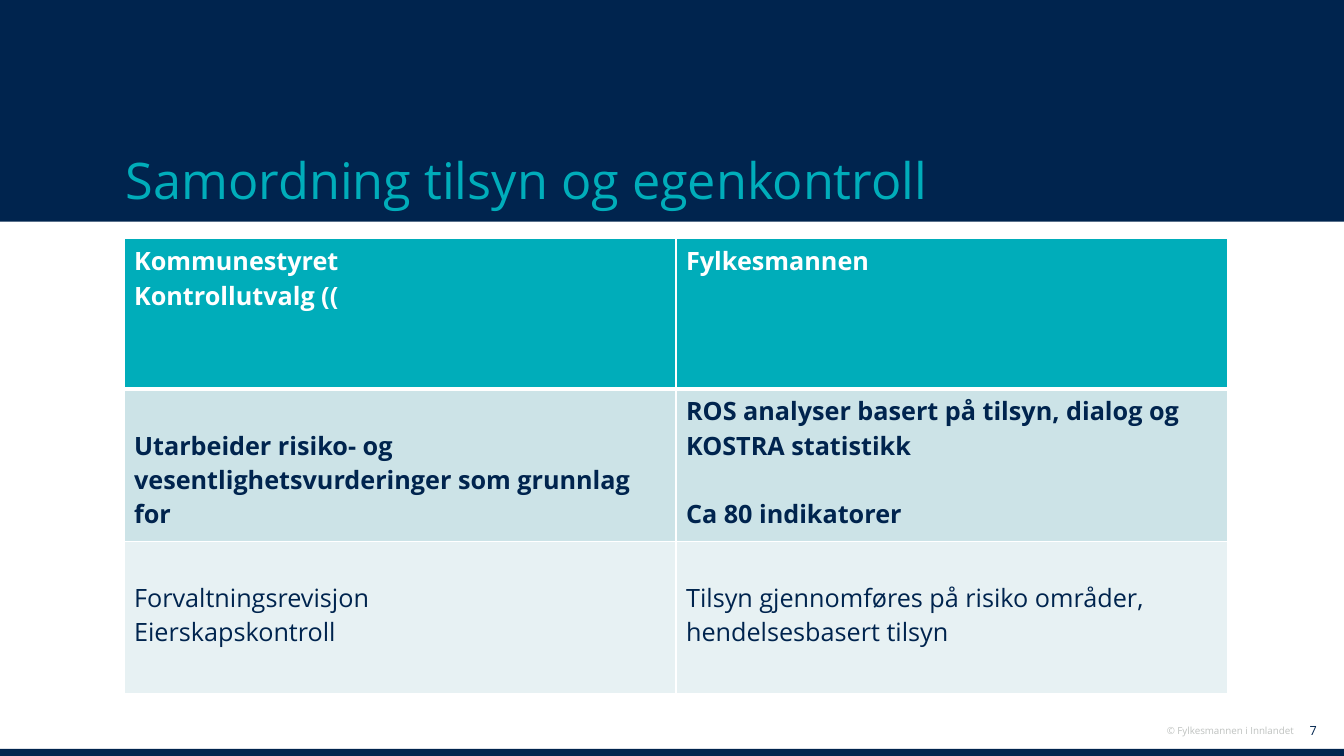
import pptx
import pptx.util
import pptx.dml.color
import pptx.enum.shapes
import pptx.enum.text
import pptx.oxml
import pptx.oxml.ns

TITLE = "Samordning tilsyn og egenkontroll"
COPYRIGHT = "© Fylkesmannen i Innlandet"
PAGE = "7"
COMPARISON = [
    {"fill": "header", "ink": "white", "bold": True, "rule_above": 1, "rule_below": 3,
     "cells": [{"lines": ["Kommunestyret", "Kontrollutvalg (("]},
               {"lines": ["Fylkesmannen"]}]},
    {"fill": "band", "ink": "navy", "bold": True, "rule_above": 3, "rule_below": 1,
     "cells": [{"lines": ["Utarbeider risiko- og vesentlighetsvurderinger som grunnlag for"],
                "lowered": 1},
               {"lines": ["ROS analyser basert på tilsyn, dialog og KOSTRA statistikk",
                          "Ca 80 indikatorer"], "gap": 1}]},
    {"fill": "light", "ink": "navy", "bold": False, "rule_above": 1, "rule_below": 1,
     "cells": [{"lines": ["Forvaltningsrevisjon", "Eierskapskontroll"], "lowered": 1},
               {"lines": ["Tilsyn gjennomføres på risiko områder, hendelsesbasert tilsyn"],
                "lowered": 1}]},
]
THEME = {
    "font": "Open Sans",
    "navy": "00244E", "header": "00ADBA", "band": "CCE3E7", "light": "E7F1F3",
    "white": "FFFFFF", "grey": "BFC2C0",
    "title": 36, "body": 18, "page": 9, "copyright": 7,
}
WIDTH, HEIGHT = 13.33, 7.5
BANNER_HEIGHT, STRIP_HEIGHT = 2.2, 0.07
TABLE_LEFT, TABLE_TOP, TABLE_WIDTH = 1.23, 2.37, 10.95
ROW_HEIGHTS = [1.49, 1.51, 1.51]
BODY_LINE = THEME["body"] * 1.36
CELL_TOP = 3.6

inches, points = pptx.util.Inches, pptx.util.Pt
align, anchor = pptx.enum.text.PP_ALIGN, pptx.enum.text.MSO_ANCHOR


def color(key):
    return pptx.dml.color.RGBColor.from_string(THEME[key])


def style(font, size, ink, bold=False):
    font.color.rgb = color(ink)
    formats = {"name": THEME["font"], "size": points(THEME[size]), "bold": bold}
    for attribute, value in formats.items():
        setattr(font, attribute, value)


def add_bar(slide, top, height):
    bar = slide.shapes.add_shape(pptx.enum.shapes.MSO_SHAPE.RECTANGLE, 0, inches(top),
                                 inches(WIDTH), inches(height))
    bar.shadow.inherit = False
    bar.fill.solid()
    bar.fill.fore_color.rgb = color("navy")
    bar.line.fill.background()


def add_label(slide, text, box, size, ink, alignment, vertical):
    frame = slide.shapes.add_textbox(*map(inches, box)).text_frame
    for attribute, value in {"word_wrap": True, "vertical_anchor": vertical}.items():
        setattr(frame, attribute, value)
    line = frame.paragraphs[0]
    line.text = text
    line.alignment = alignment
    style(line.runs[0].font, size, ink)


def add_borders(cell, above, below):
    properties = cell._tc.get_or_add_tcPr()
    for side, width in {"lnL": 1, "lnR": 1, "lnT": above, "lnB": below}.items():
        properties.append(pptx.oxml.parse_xml(
            f'<a:{side} {pptx.oxml.ns.nsdecls("a")} w="{points(width)}"><a:solidFill>'
            f'<a:srgbClr val="{THEME["white"]}"/></a:solidFill></a:{side}>'))


def fill_cell(cell, entry, band):
    add_borders(cell, band["rule_above"], band["rule_below"])
    cell.fill.solid()
    cell.fill.fore_color.rgb = color(band["fill"])
    cell.margin_top = points(CELL_TOP + entry.get("lowered", 0) * BODY_LINE)
    cell.text = "\n".join(entry["lines"])
    for position, line in enumerate(cell.text_frame.paragraphs):
        if position and "gap" in entry:
            line.space_before = points(entry["gap"] * BODY_LINE)
        style(line.runs[0].font, "body", band["ink"], band["bold"])


def add_comparison(slide):
    columns = len(COMPARISON[0]["cells"])
    table = slide.shapes.add_table(
        len(COMPARISON), columns, inches(TABLE_LEFT), inches(TABLE_TOP),
        inches(TABLE_WIDTH), inches(sum(ROW_HEIGHTS))).table
    for column in table.columns:
        column.width = inches(TABLE_WIDTH / columns)
    for row, height, band in zip(table.rows, ROW_HEIGHTS, COMPARISON):
        row.height = inches(height)
        for cell, entry in zip(row.cells, band["cells"]):
            fill_cell(cell, entry, band)


def main():
    deck = pptx.Presentation()
    deck.slide_width, deck.slide_height = inches(WIDTH), inches(HEIGHT)
    slide = deck.slides.add_slide(deck.slide_layouts[6])
    add_bar(slide, HEIGHT - STRIP_HEIGHT, STRIP_HEIGHT)
    add_bar(slide, 0, BANNER_HEIGHT)
    add_label(slide, PAGE, (12.62, 7.12, 0.54, 0.26), "page", "navy",
              align.RIGHT, anchor.MIDDLE)
    add_label(slide, COPYRIGHT, (10.85, 7.14, 2.08, 0.22), "copyright", "grey",
              align.RIGHT, anchor.TOP)
    add_label(slide, TITLE, (1.15, 0.95, 11.02, 1.18), "title", "header",
              align.LEFT, anchor.BOTTOM)
    add_comparison(slide)
    deck.save("out.pptx")


if __name__ == "__main__":
    main()
